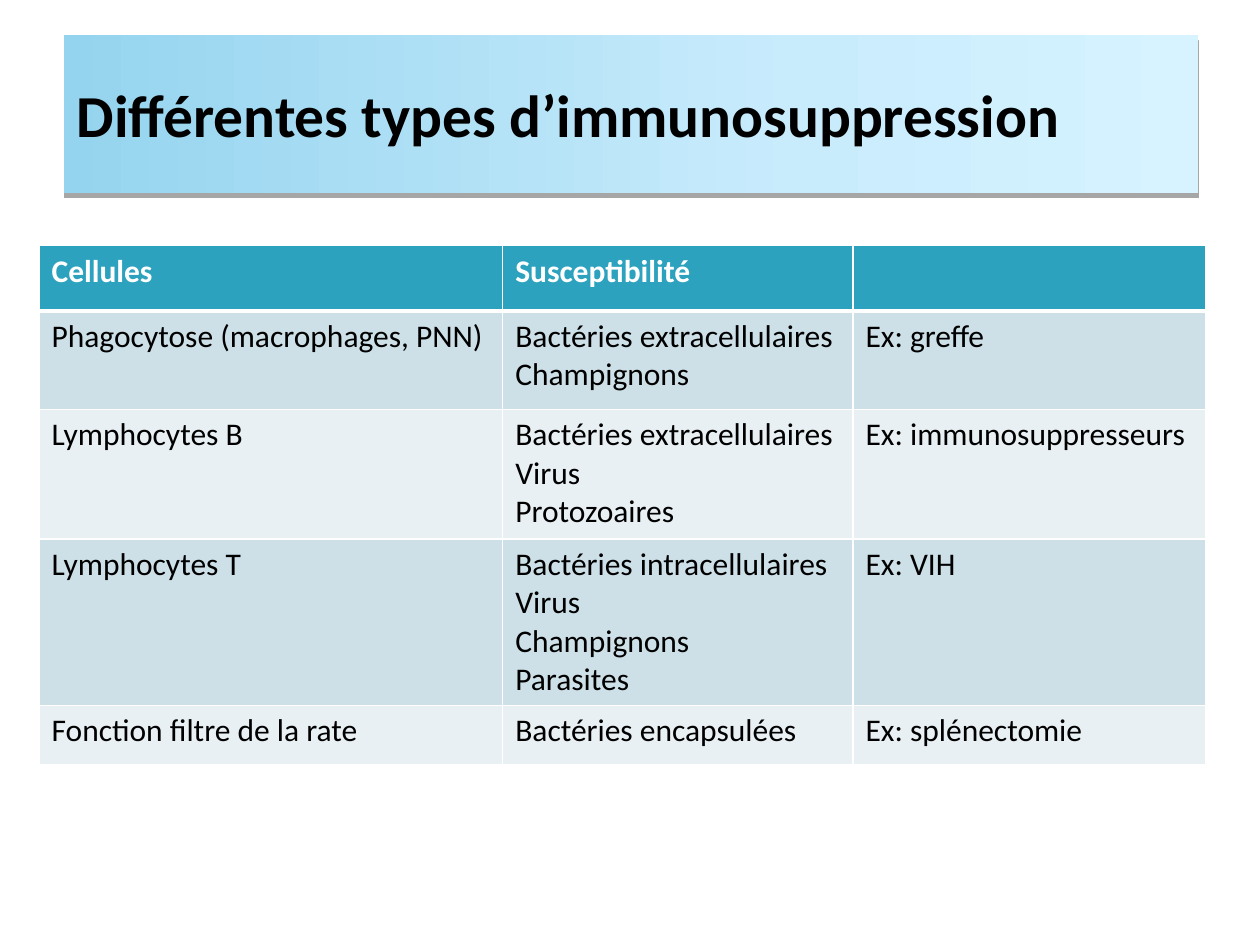
from dataclasses import dataclass

from lxml.etree import SubElement
from pptx import Presentation
from pptx.dml.color import RGBColor
from pptx.enum.text import MSO_ANCHOR, MSO_AUTO_SIZE, PP_ALIGN
from pptx.oxml import parse_xml
from pptx.oxml.ns import nsdecls, qn
from pptx.util import Inches, Pt


@dataclass(frozen=True)
class Theme:
    font: str = "Calibri"
    title_size: int = 34
    table_size: int = 18
    text: str = "000000"
    light: str = "FFFFFF"
    header: str = "2DA2BF"
    bands: tuple = ("CDE0E8", "E8F0F4")
    gradient: tuple = ((0, "95D4EE"), (65, "C9ECFD"), (100, "D6F3FF"))


THEME = Theme()
TITLE = "Différentes types d’immunosuppression"
ROWS = [
    ("Cellules", "Susceptibilité", ""),
    ("Phagocytose (macrophages, PNN)",
     "Bactéries extracellulaires\nChampignons", "Ex: greffe"),
    ("Lymphocytes B",
     "Bactéries extracellulaires\nVirus\nProtozoaires", "Ex: immunosuppresseurs"),
    ("Lymphocytes T",
     "Bactéries intracellulaires\nVirus\nChampignons\nParasites", "Ex: VIH"),
    ("Fonction filtre de la rate", "Bactéries encapsulées", "Ex: splénectomie"),
]
COLUMN_WIDTHS = (3.68, 2.78, 2.8)
ROW_HEIGHTS = (0.52, 0.78, 1.03, 1.32, 0.47)


def format_text(frame, size, color, bold):
    for paragraph in frame.paragraphs:
        paragraph.alignment = PP_ALIGN.LEFT
        for run in paragraph.runs:
            run.font.name = THEME.font
            run.font.size = Pt(size)
            run.font.bold = bold
            run.font.color.rgb = RGBColor.from_string(color)


def style_banner(banner):
    stops = "".join(
        f'<a:gs pos="{share * 1000}"><a:srgbClr val="{color}"/></a:gs>'
        for share, color in THEME.gradient)
    properties = banner.element.spPr
    properties.append(parse_xml(
        f'<a:gradFill {nsdecls("a")} rotWithShape="1"><a:gsLst>{stops}</a:gsLst>'
        '<a:lin ang="0" scaled="0"/></a:gradFill>'))
    banner.line.fill.background()
    properties.append(parse_xml(
        f'<a:effectLst {nsdecls("a")}><a:outerShdw blurRad="0" dist="{Pt(3)}" '
        'dir="5400000" rotWithShape="0"><a:srgbClr val="000000">'
        '<a:alpha val="35000"/></a:srgbClr></a:outerShdw></a:effectLst>'))


def place_title(slide, left, top, width, height):
    title = slide.shapes.title
    title.left, title.top, title.width, title.height = map(
        Inches, (left, top, width, height))
    style_banner(title)
    frame = title.text_frame
    frame.text = TITLE
    frame.word_wrap = True
    frame.auto_size = MSO_AUTO_SIZE.NONE
    frame.vertical_anchor = MSO_ANCHOR.MIDDLE
    format_text(frame, THEME.title_size, THEME.text, True)


def add_borders(cell, top, bottom):
    properties = cell._tc.get_or_add_tcPr()
    widths = {"a:lnL": 1, "a:lnR": 1, "a:lnT": top, "a:lnB": bottom}
    for place, (side, width) in enumerate(widths.items()):
        border = SubElement(properties, qn(side), w=str(Pt(width)))
        fill = SubElement(border, qn("a:solidFill"))
        SubElement(fill, qn("a:srgbClr"), val=THEME.light)
        properties.insert(place, border)


def place_table(slide, left, top):
    table = slide.shapes.add_table(
        len(ROWS), len(COLUMN_WIDTHS), Inches(left), Inches(top),
        Inches(sum(COLUMN_WIDTHS)), Inches(sum(ROW_HEIGHTS))).table
    for column, width in zip(table.columns, COLUMN_WIDTHS):
        column.width = Inches(width)
    for index, (row, height, texts) in enumerate(zip(table.rows, ROW_HEIGHTS, ROWS)):
        row.height = Inches(height)
        is_header = index == 0
        background = THEME.header if is_header else THEME.bands[(index - 1) % 2]
        color = THEME.light if is_header else THEME.text
        for cell, text in zip(row.cells, texts):
            cell.text_frame.text = text
            format_text(cell.text_frame, THEME.table_size, color, is_header)
            cell.fill.solid()
            cell.fill.fore_color.rgb = RGBColor.from_string(background)
            add_borders(cell, 3 if index == 1 else 1, 3 if is_header else 1)


def main():
    deck = Presentation()
    deck.slide_width, deck.slide_height = Inches(10), Inches(7.5)
    slide = deck.slides.add_slide(deck.slide_layouts[5])
    place_title(slide, 0.51, 0.28, 9, 1.25)
    place_table(slide, 0.31, 1.95)
    deck.save("out.pptx")


if __name__ == "__main__":
    main()
